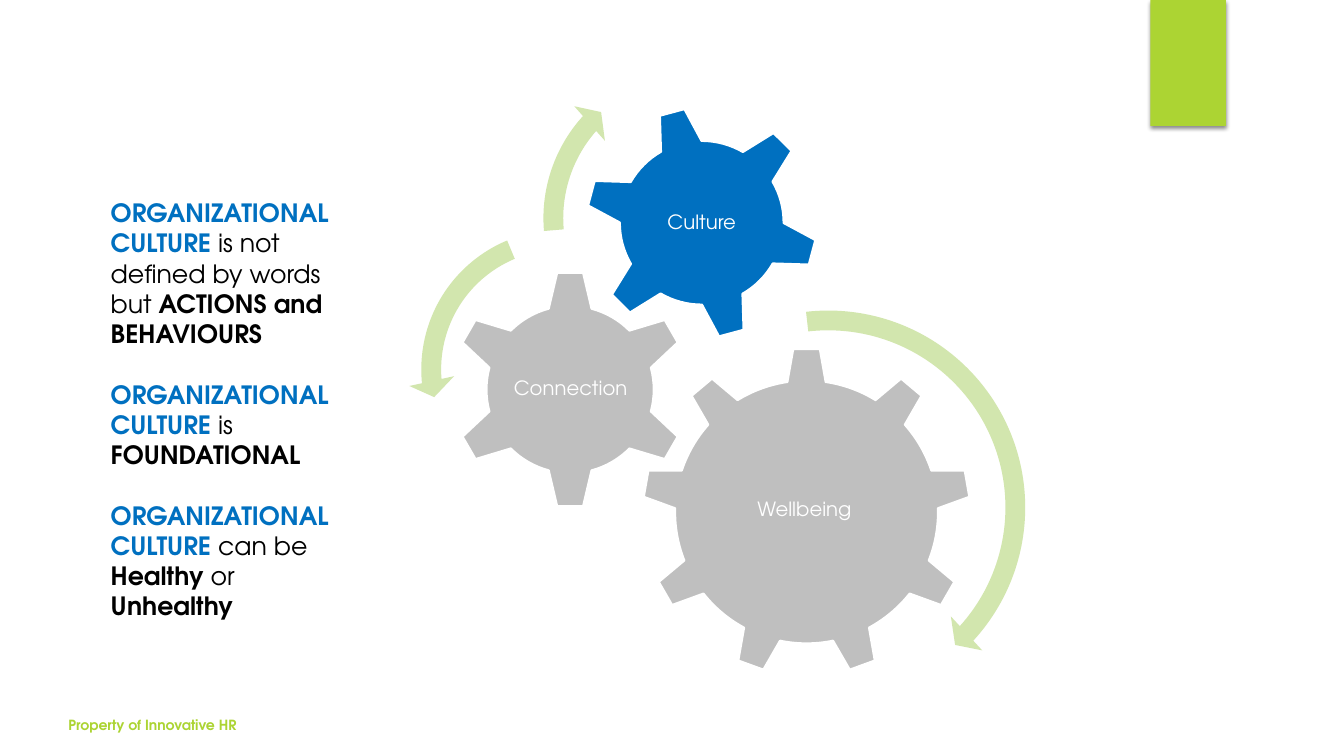
import dataclasses
import typing

import lxml.etree
import pptx
import pptx.dml.color
import pptx.enum.shapes
import pptx.enum.text
import pptx.oxml
import pptx.oxml.ns
import pptx.util

Inches = pptx.util.Inches
Pt = pptx.util.Pt
SHAPE = pptx.enum.shapes.MSO_SHAPE
ANCHOR = pptx.enum.text.MSO_ANCHOR
ALIGN = pptx.enum.text.PP_ALIGN

FONT = "TeX Gyre Adventor"
COLORS = {
    "lime": "ACD433",
    "pale_lime": "D2E6AE",
    "blue": "0070C0",
    "gray": "BFBFBF",
    "white": "FFFFFF",
    "black": "000000",
}


@dataclasses.dataclass
class Span:
    text: str
    color: str = "black"
    bold: bool = False


@dataclasses.dataclass
class Paragraph:
    spans: list[Span]
    format: dict[str, typing.Any] = dataclasses.field(default_factory=dict)


@dataclasses.dataclass
class Box:
    left: float
    top: float
    width: float
    height: float


@dataclasses.dataclass
class Gear:
    label: str
    kind: typing.Any
    box: Box
    label_box: Box
    color: str
    rotation: float = 0


@dataclasses.dataclass
class Arrow:
    kind: typing.Any
    box: Box
    adjustments: list[float]


GEARS = [
    Gear("Wellbeing ", SHAPE.GEAR_9, Box(6.37, 3.45, 3.26, 3.26),
         Box(7.03, 4.22, 1.95, 1.68), "gray"),
    Gear("Connection", SHAPE.GEAR_6, Box(4.47, 2.68, 2.37, 2.37),
         Box(5.07, 3.28, 1.18, 1.17), "gray"),
    Gear("Culture", SHAPE.GEAR_6, Box(5.8, 1.05, 2.32, 2.32),
         Box(6.31, 1.56, 1.3, 1.3), "blue", 345),
]

ARROWS = [
    Arrow(SHAPE.CIRCULAR_ARROW, Box(6.13, 2.95, 4.17, 4.17),
          [0.047, 2.99, 25.393, 158.123, 0.055]),
    Arrow(SHAPE.LEFT_CIRCULAR_ARROW, Box(4.05, 2.15, 3.03, 3.03),
          [0.065, 4.3, 104.891, 148.378, 0.075]),
    Arrow(SHAPE.CIRCULAR_ARROW, Box(5.26, 0.53, 3.27, 3.27),
          [0.06, 3.941, 133.138, 105.082, 0.07]),
]

SUBJECT = Span("ORGANIZATIONAL CULTURE ", "blue", True)
SECTION_GAP = {"space_before": Pt(21.6)}
STATEMENTS = [
    Paragraph([SUBJECT, Span("is not defined by words but "),
               Span("ACTIONS and BEHAVIOURS", bold=True)]),
    Paragraph([SUBJECT, Span("is")], SECTION_GAP),
    Paragraph([Span("FOUNDATIONAL", bold=True)]),
    Paragraph([SUBJECT, Span("can be")], SECTION_GAP),
    Paragraph([Span("Healthy", bold=True), Span(" or "),
               Span("Unhealthy", bold=True)]),
]


def rgb(color: str) -> pptx.dml.color.RGBColor:
    return pptx.dml.color.RGBColor.from_string(COLORS[color])


def apply(target: typing.Any, values: dict[str, typing.Any]) -> None:
    for name, value in values.items():
        setattr(target, name, value)


def bounds(box: Box) -> list[int]:
    return [Inches(value) for value in dataclasses.astuple(box)]


def add_filled_shape(page: typing.Any, kind: typing.Any, box: Box, color: str) -> typing.Any:
    shape = page.shapes.add_shape(kind, *bounds(box))
    shape.shadow.inherit = False
    shape.fill.solid()
    shape.fill.fore_color.rgb = rgb(color)
    shape.line.fill.background()
    return shape


def add_text(page: typing.Any, box: Box, paragraphs: list[Paragraph], size: float,
             frame_format: dict[str, typing.Any]) -> None:
    frame = page.shapes.add_textbox(*bounds(box)).text_frame
    apply(frame, {"word_wrap": True, **frame_format})
    for index, paragraph in enumerate(paragraphs):
        para = frame.add_paragraph() if index else frame.paragraphs[0]
        apply(para, paragraph.format)
        for span in paragraph.spans:
            run = para.add_run()
            run.text = span.text
            apply(run.font, {"name": FONT, "size": Pt(size), "bold": span.bold})
            run.font.color.rgb = rgb(span.color)


def add_tab(page: typing.Any) -> None:
    tab = add_filled_shape(page, SHAPE.RECTANGLE, Box(11.41, 0, 0.75, 1.25), "lime")
    namespace = pptx.oxml.ns.qn
    effects = tab.fill._xPr.find(namespace("a:effectLst"))
    shadow = lxml.etree.SubElement(
        effects, namespace("a:outerShdw"), blurRad=str(Pt(3)), dist=str(Pt(2)),
        dir="5400000", rotWithShape="0")
    color = lxml.etree.SubElement(shadow, namespace("a:srgbClr"), val=COLORS["black"])
    lxml.etree.SubElement(color, namespace("a:alpha"), val="45000")


def add_gear(page: typing.Any, gear: Gear) -> None:
    shape = add_filled_shape(page, gear.kind, gear.box, gear.color)
    shape.rotation = gear.rotation
    shape.line.color.rgb = rgb("white")
    shape.line.width = Pt(1.5)
    margins = {f"margin_{side}": Inches(0.02) for side in ("left", "top", "right", "bottom")}
    label = Paragraph([Span(gear.label, "white")],
                      {"alignment": ALIGN.CENTER, "line_spacing": 0.9})
    add_text(page, gear.label_box, [label], 14,
             {"vertical_anchor": ANCHOR.MIDDLE, **margins})


def add_arrow(page: typing.Any, arrow: Arrow) -> None:
    shape = add_filled_shape(page, arrow.kind, arrow.box, "pale_lime")
    for index, value in enumerate(arrow.adjustments):
        shape.adjustments[index] = value


def main() -> None:
    deck = pptx.Presentation()
    apply(deck, {"slide_width": Inches(13.33), "slide_height": Inches(7.5)})
    page = deck.slides.add_slide(deck.slide_layouts[6])
    add_tab(page)
    for gear in GEARS:
        add_gear(page, gear)
    for arrow in ARROWS:
        add_arrow(page, arrow)
    add_text(page, Box(1, 1.91, 2.44, 4.64), STATEMENTS, 18,
             {"auto_size": pptx.enum.text.MSO_AUTO_SIZE.SHAPE_TO_FIT_TEXT})
    add_text(page, Box(0.58, 6.99, 4.22, 0.33),
             [Paragraph([Span("Property of Innovative HR", "lime", True)])], 10,
             {"vertical_anchor": ANCHOR.BOTTOM})
    deck.save("out.pptx")


if __name__ == "__main__":
    main()
